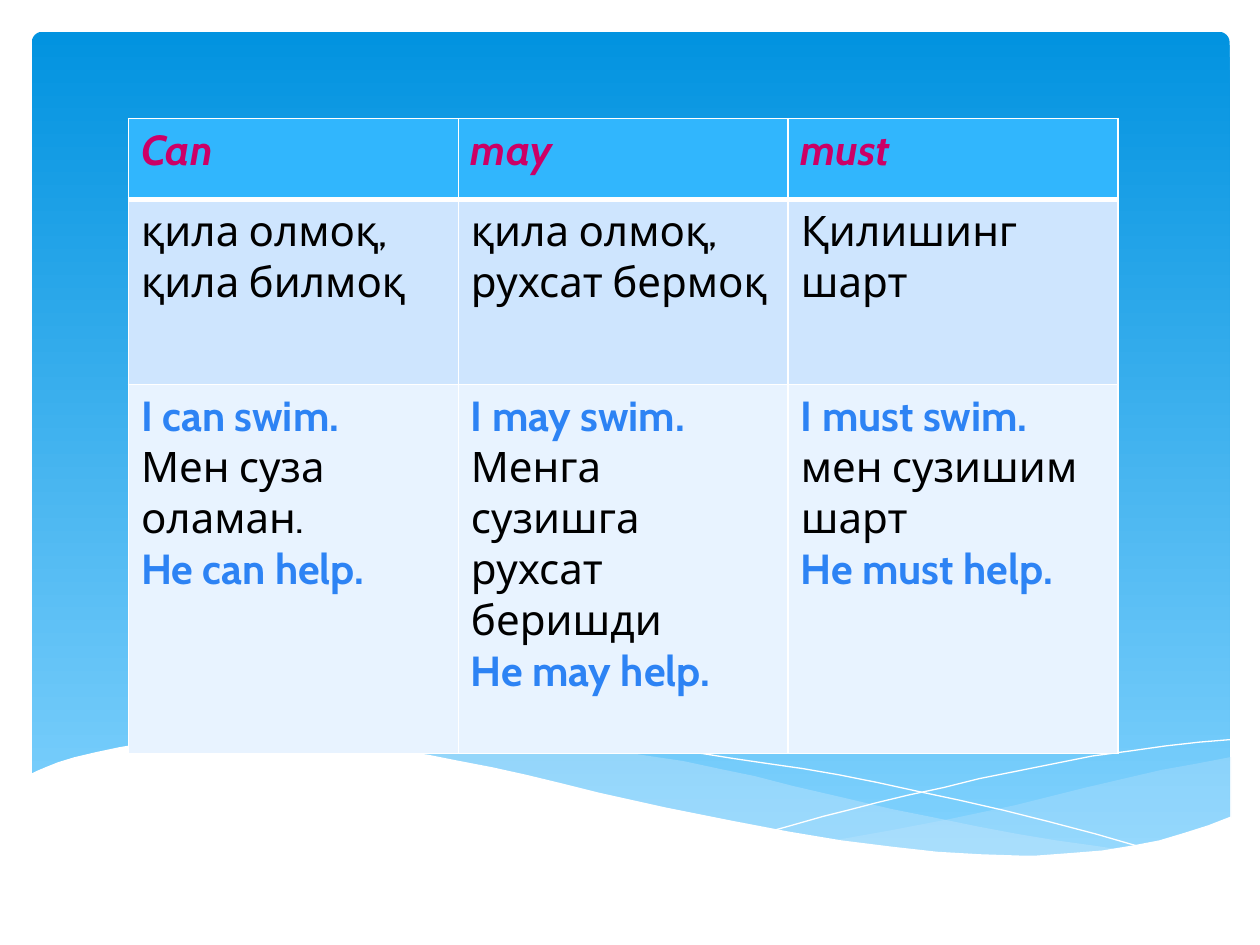
"""Builds a slide with a table of the modal verbs can, may and must over a wavy blue backdrop."""
from lxml import etree
from pptx import Presentation, util as u
from pptx.dml.color import RGBColor
from pptx.enum import shapes
from pptx.oxml.ns import qn


def rgb(code):
    return RGBColor.from_string(code)


def wave(pts, fill=None, alpha=100):
    pen = slide.shapes.build_freeform(*pts[0], scale=u.Cm(0.0254))
    pen.add_line_segments(pts[1:], close=fill is not None)
    shape = pen.convert_to_shape()
    shape.shadow.inherit = False
    if fill:
        shape.fill.solid()
        shape.fill.fore_color.rgb = rgb(fill)
        shape.line.fill.background()
        color = shape.fill._xPr.find(qn("a:solidFill"))[0]
        etree.SubElement(color, qn("a:alpha"), val=str(alpha * 1000))
    else:
        shape.fill.background()
        shape.line.color.rgb = rgb("FFFFFF")
        shape.line.width = u.Pt(0)


prs = Presentation()
prs.slide_width, prs.slide_height = u.Cm(25.4), u.Cm(19.05)
slide = prs.slides.add_slide(prs.slide_layouts[6])

back = slide.shapes.add_shape(
    shapes.MSO_SHAPE.ROUNDED_RECTANGLE, u.Cm(0.64), u.Cm(0.64), u.Cm(24.15), u.Cm(16.76))
back.adjustments[0] = 0.013
back.shadow.inherit = False
back.line.fill.background()
back.fill.gradient()
back.fill.gradient_angle = 270
for stop, code, pos in zip(back.fill.gradient_stops, ("0293E0", "83D3FE"), (0, 1)):
    stop.color.rgb = rgb(code)
    stop.position = pos

right = [
    (976, 601), (950, 606), (922, 611), (892, 618), (862, 625), (806, 639), (754, 650),
    (707, 659), (662, 667), (692, 671), (719, 674), (746, 677), (770, 679), (793, 679),
    (815, 680), (836, 679), (855, 678), (873, 676), (890, 674), (907, 671), (922, 667),
    (937, 663), (951, 659), (964, 654), (977, 649), (977, 601)]
middle = [
    (894, 675), (867, 671), (838, 667), (808, 662), (776, 656), (742, 649), (707, 642),
    (669, 633), (630, 624), (599, 616), (570, 610), (542, 604), (515, 600), (489, 596),
    (465, 593), (442, 591), (420, 589), (400, 588), (380, 587), (362, 587), (345, 588),
    (314, 590), (287, 593), (323, 598), (363, 604), (405, 613), (450, 624), (491, 634),
    (530, 642), (567, 650), (602, 657), (635, 663), (666, 668), (696, 672), (723, 676),
    (749, 678), (774, 679), (797, 680), (819, 680), (839, 680), (859, 679), (877, 677)]
fall = [
    (310, 597), (318, 596), (336, 593), (353, 591), (375, 590), (402, 589), (433, 589),
    (469, 590), (511, 594), (557, 598), (582, 602), (609, 606), (637, 610), (666, 615),
    (696, 621), (728, 628), (761, 635), (796, 643), (832, 652), (870, 662), (908, 673)]
rise = [
    (614, 659), (625, 656), (653, 648), (673, 643), (696, 637), (721, 631), (749, 625),
    (777, 618), (807, 612), (837, 606), (867, 600), (897, 596), (925, 592), (952, 589),
    (976, 587)]
front = [
    (977, 648), (959, 655), (940, 661), (920, 667), (899, 671), (875, 675), (850, 677),
    (823, 679), (809, 679), (778, 678), (744, 676), (708, 672), (668, 667), (626, 660),
    (579, 651), (529, 641), (475, 629), (447, 622), (418, 615), (391, 609), (365, 604),
    (340, 599), (316, 596), (292, 592), (271, 590), (250, 588), (230, 587), (211, 586),
    (177, 586), (146, 587), (119, 589), (95, 593), (76, 597), (59, 601), (46, 605),
    (36, 609), (29, 612), (23, 615), (23, 731), (977, 731)]
wave(right, "C6E7FC", 29)
wave(middle, "C6E7FC", 40)
wave(fall)
wave(rise)
wave(front, "FFFFFF")

rows = [
    ["Can", "may", "must"],
    ["қила олмоқ, қила билмоқ", "қила олмоқ, рухсат бермоқ", "Қилишинг шарт"],
    ["I can swim.\nМен суза оламан.\nHe can help.",
     "I may swim.\nМенга сузишга рухсат беришди\nHe may help.",
     "I must swim.\nмен сузишим шарт\nHe must help."]]
high = [1.63, 3.73, 7.44]
fills = ["31B6FD", "CEE5FE", "E8F3FF"]
table = slide.shapes.add_table(
    3, 3, u.Cm(2.59), u.Cm(2.39), u.Cm(19.95), u.Cm(sum(high))).table
for col in table.columns:
    col.width = u.Cm(6.65)
for r, row in enumerate(rows):
    table.rows[r].height = u.Cm(high[r])
    for c, words in enumerate(row):
        cell = table.cell(r, c)
        for side in "LRTB":
            wide = 3 if (r, side) in ((0, "B"), (1, "T")) else 1
            edge = etree.SubElement(
                cell._tc.get_or_add_tcPr(), qn("a:ln" + side), w=str(u.Pt(wide)))
            paint = etree.SubElement(edge, qn("a:solidFill"))
            etree.SubElement(paint, qn("a:srgbClr"), val="FFFFFF")
        cell.fill.solid()
        cell.fill.fore_color.rgb = rgb(fills[r])
        cell.text = words
        for i, para in enumerate(cell.text_frame.paragraphs):
            english = r == 2 and i != 1
            font = para.font
            font.name, font.size = "Cabin", u.Pt(24)
            font.bold, font.italic = r == 0 or english, r == 0
            font.color.rgb = rgb("CC0066" if r == 0 else "2D83F4" if english else "000000")

prs.save("out.pptx")
